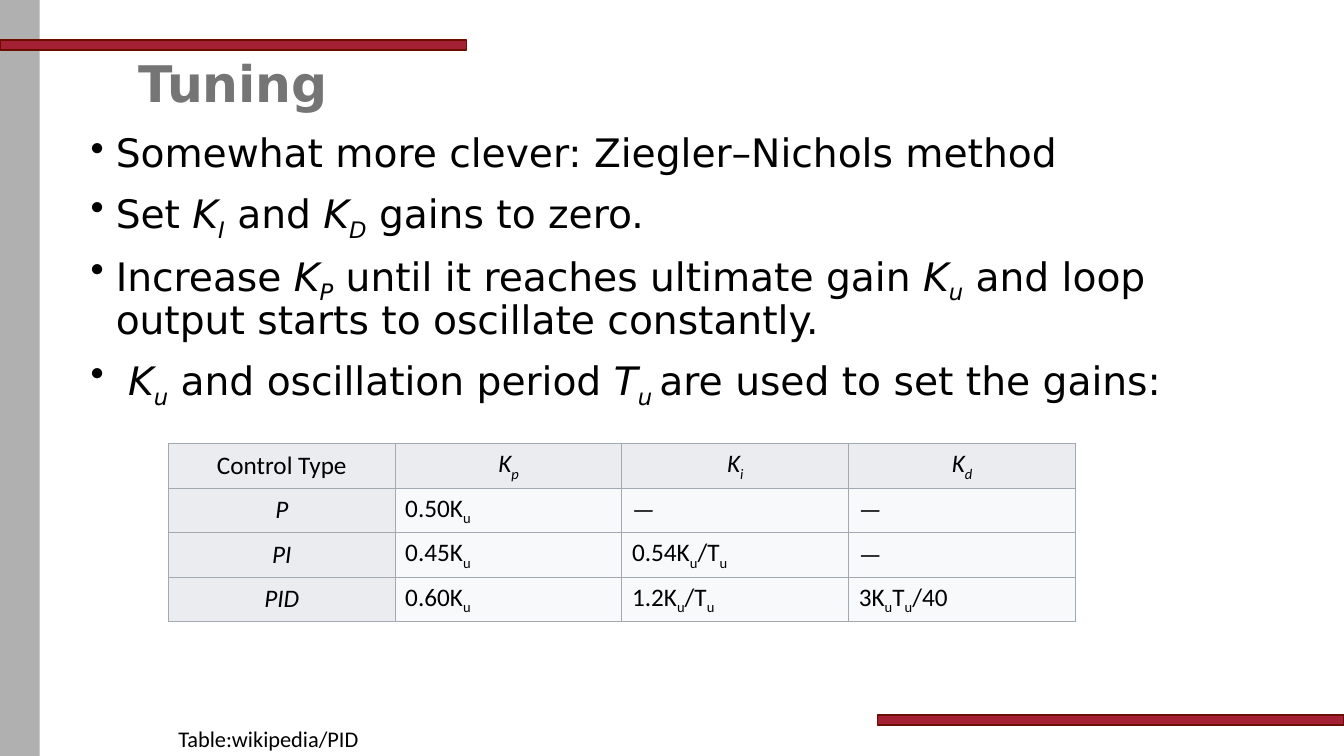
from itertools import cycle

from lxml.etree import SubElement
from pptx import Presentation
from pptx.dml.color import RGBColor
from pptx.enum.shapes import MSO_SHAPE as Shape
from pptx.enum.text import MSO_ANCHOR as Anchor, PP_ALIGN as Align
from pptx.oxml.ns import qn
from pptx.util import Inches, Pt

WIDTH, HEIGHT = Inches(13.33), Inches(7.5)
COLUMN, ROW = WIDTH / 100, HEIGHT / 100

PLAIN, ITALIC = (False, False), (True, False)
SUBSCRIPT, ITALIC_SUBSCRIPT = (False, True), (True, True)
SYMBOLS = (PLAIN, ITALIC, ITALIC_SUBSCRIPT)
FORMULA = (PLAIN, SUBSCRIPT)

STEPS = [
    "Somewhat more clever: Ziegler–Nichols method",
    "Set |K|I| and |K|D| gains to zero.",
    "Increase |K|P| until it reaches ultimate gain |K|u"
    "| and loop output starts to oscillate constantly.",
    " |K|u| and oscillation period |T|u |are used to set the gains:",
]
GAINS = [
    ["Control Type", "|K|p", "|K|i", "|K|d"],
    ["|P", "0.50K|u", "—", "—"],
    ["|PI", "0.45K|u", "0.54K|u|/T|u", "—"],
    ["|PID", "0.60K|u", "1.2K|u|/T|u", "3K|u|T|u|/40"],
]


def color(hex_code):
    return RGBColor.from_string(hex_code)


def place(box):
    left, top, width, height = box
    return (round(left * COLUMN), round(top * ROW),
            round(width * COLUMN), round(height * ROW))


def set_font(paragraph, name, size, hex_code="000000", bold=False):
    font = paragraph.font
    font.name, font.size, font.bold = name, Pt(size), bold
    font.color.rgb = color(hex_code)


def write_marked(paragraph, marked, styles):
    for text, (italic, lowered) in zip(marked.split("|"), cycle(styles)):
        if text:
            run = paragraph.add_run()
            run.text = text
            run.font.italic = italic
            if lowered:
                run.font._element.set("baseline", "-25000")


def add_band(slide, box, fill, line=None):
    band = slide.shapes.add_shape(Shape.RECTANGLE, *place(box))
    band.shadow.inherit = False
    band.fill.solid()
    band.fill.fore_color.rgb = color(fill)
    if line:
        band.line.color.rgb = color(line)
        band.line.width = Pt(1)
    else:
        band.line.fill.background()


def add_frame(slide, bar_width=34.73):
    add_band(slide, (0, 0, 2.95, 100), "B0B0B0")
    for left, top in ((0, 5.27), (100 - bar_width, 94.6)):
        add_band(slide, (left, top, bar_width, 1.33), "A32035", "6D0D00")


def add_title(slide, box):
    title = slide.shapes.title
    title.left, title.top, title.width, title.height = place(box)
    title.text_frame.text = "Tuning"
    title.text_frame.vertical_anchor = Anchor.MIDDLE
    heading = title.text_frame.paragraphs[0]
    heading.alignment = Align.LEFT
    heading.line_spacing = 0.9
    set_font(heading, "DejaVu Sans", 36, "757575", True)


def add_steps(slide, box):
    frame = slide.shapes.add_textbox(*place(box)).text_frame
    frame.word_wrap = True
    for index, step in enumerate(STEPS):
        paragraph = frame.add_paragraph() if index else frame.paragraphs[0]
        paragraph.line_spacing = 0.9
        paragraph.space_before = Pt(10 if index else 0)
        properties = paragraph._p.get_or_add_pPr()
        properties.set("marL", str(Inches(0.25)))
        properties.set("indent", str(-Inches(0.25)))
        SubElement(properties, qn("a:buChar"), char="•")
        set_font(paragraph, "DejaVu Sans", 28)
        write_marked(paragraph, step, SYMBOLS)


def add_borders(cell, hex_code):
    properties = cell._tc.get_or_add_tcPr()
    for side in ("a:lnL", "a:lnR", "a:lnT", "a:lnB"):
        line = SubElement(properties, qn(side), w=str(Pt(0.75)))
        fill = SubElement(line, qn("a:solidFill"))
        SubElement(fill, qn("a:srgbClr"), val=hex_code)


def add_gains(slide, box):
    table = slide.shapes.add_table(len(GAINS), len(GAINS[0]), *place(box)).table
    table.first_row = table.horz_banding = False
    for row, entries in enumerate(GAINS):
        for column, entry in enumerate(entries):
            is_label = row == 0 or column == 0
            cell = table.cell(row, column)
            add_borders(cell, "A2A9B1")
            cell.fill.solid()
            cell.fill.fore_color.rgb = color("EAECF0" if is_label else "F8F9FA")
            cell.vertical_anchor = Anchor.MIDDLE
            paragraph = cell.text_frame.paragraphs[0]
            paragraph.alignment = Align.CENTER if is_label else Align.LEFT
            set_font(paragraph, "Calibri", 18)
            write_marked(paragraph, entry, SYMBOLS if is_label else FORMULA)


def add_reference(slide, box):
    frame = slide.shapes.add_textbox(*place(box)).text_frame
    frame.word_wrap = False
    frame.text = "Table:wikipedia/PID"
    set_font(frame.paragraphs[0], "Calibri", 16)


def main():
    deck = Presentation()
    deck.slide_width, deck.slide_height = WIDTH, HEIGHT
    slide = deck.slides.add_slide(deck.slide_layouts[5])
    add_frame(slide)
    add_title(slide, (9.53, 3.07, 67.5, 16.67))
    add_steps(slide, (6, 17.07, 88, 66))
    add_reference(slide, (12.53, 95.2, 15.08, 4.93))
    add_gains(slide, (12.53, 58.67, 67.5, 23.55))
    deck.save("out.pptx")


if __name__ == "__main__":
    main()
